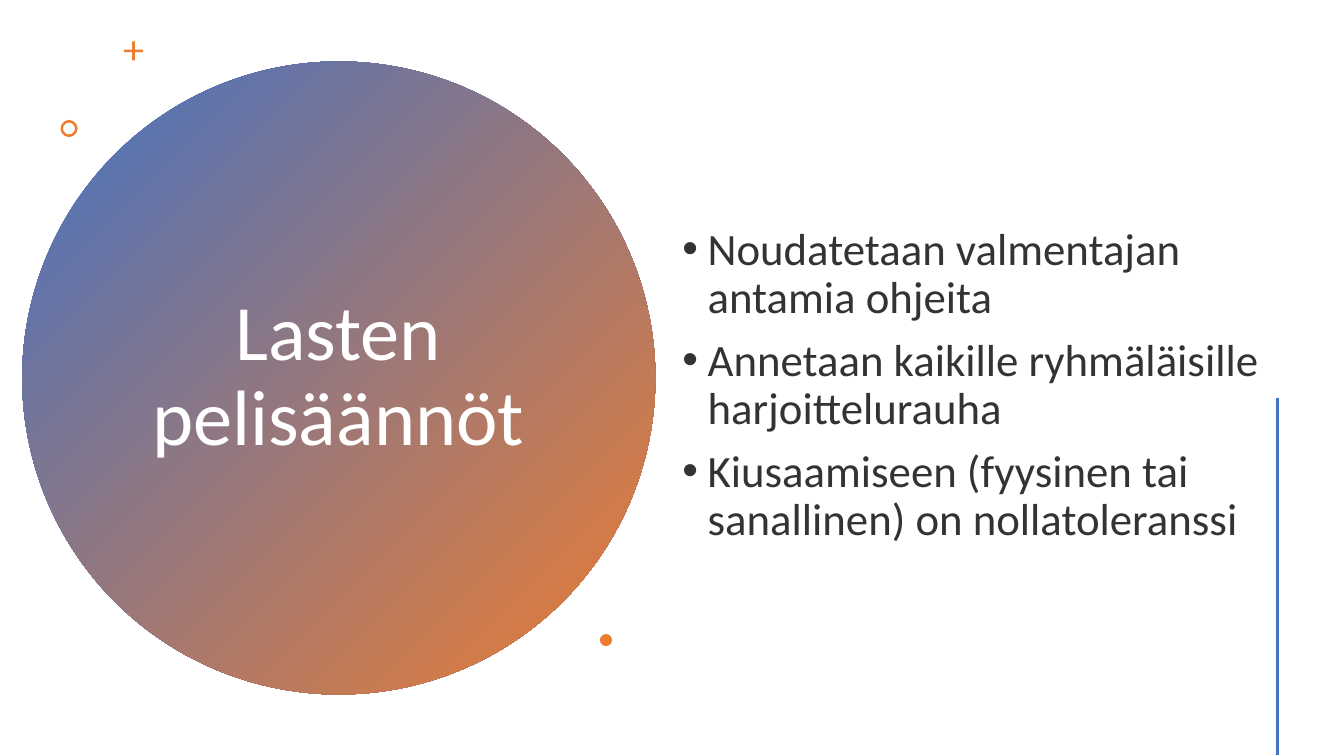
from lxml import etree
from pptx import Presentation
from pptx.dml.color import RGBColor
from pptx.enum.shapes import MSO_CONNECTOR, MSO_SHAPE
from pptx.enum.text import MSO_ANCHOR, PP_ALIGN
from pptx.oxml.ns import qn
from pptx.util import Inches, Pt

OVAL, CROSS, RING = MSO_SHAPE.OVAL, MSO_SHAPE.CROSS, MSO_SHAPE.DONUT
LINE = MSO_CONNECTOR.STRAIGHT
MIDDLE = MSO_ANCHOR.MIDDLE
LEFT, CENTER = PP_ALIGN.LEFT, PP_ALIGN.CENTER
BLUE, ORANGE, WHITE, DARK = "4472C4", "ED7D31", "FFFFFF", "333333"
RULES = [
    "Noudatetaan valmentajan antamia ohjeita",
    "Annetaan kaikille ryhmäläisille harjoittelurauha",
    "Kiusaamiseen (fyysinen tai sanallinen) on nollatoleranssi",
]


def color(code):
    """Turn a hex string into a colour."""
    return RGBColor.from_string(code)


def add_mark(slide, kind, x, y, size, adjust=None):
    """Add a plain orange shape in a square box."""
    mark = slide.shapes.add_shape(kind, *map(Inches, (x, y, size, size)))
    mark.shadow.inherit = False
    mark.line.fill.background()
    mark.fill.solid()
    mark.fill.fore_color.rgb = color(ORANGE)
    if adjust is not None:
        mark.adjustments[0] = adjust
    return mark


def add_text(slide, box, lines, size, code, align, bullet=False):
    """Add vertically centred paragraphs, bulleted if asked."""
    frame = slide.shapes.add_textbox(*map(Inches, box)).text_frame
    frame.word_wrap = True
    frame.vertical_anchor = MIDDLE
    for i, line in enumerate(lines):
        para = frame.add_paragraph() if i else frame.paragraphs[0]
        para.text = line
        para.alignment = align
        para.line_spacing = 0.9
        para.space_before = Pt(10 if i else 0)
        if bullet:
            props = para._p.get_or_add_pPr()
            props.set("marL", str(Inches(0.25)))
            props.set("indent", str(-Inches(0.25)))
            etree.SubElement(props, qn("a:buFont")).set("typeface", "Arial")
            etree.SubElement(props, qn("a:buChar")).set("char", "•")
        para.font.name = "Calibri"
        para.font.size = Pt(size)
        para.font.color.rgb = color(code)


def add_badge(slide, x, y, size):
    """Add the gradient disc with its title and small marks."""
    disc = add_mark(slide, OVAL, x, y, size)
    disc.fill.gradient()
    disc.fill.gradient_angle = 315
    for stop, code in zip(disc.fill.gradient_stops, (BLUE, ORANGE)):
        stop.color.rgb = color(code)
    add_text(slide, (x + 1.14, y + 0.8, 3.99, 4.67),
             ["Lasten pelisäännöt"], 56, WHITE, CENTER)
    add_mark(slide, CROSS, x + 1.01, y - 0.2, 0.19, 0.43)
    add_mark(slide, RING, x + 0.38, y + 0.58, 0.17, 0.15)
    add_mark(slide, OVAL, x + 5.73, y + 5.68, 0.12)


def add_rules(slide, x, y, width, height):
    """Add the list of rules and the upright line at its right."""
    add_text(slide, (x, y, width, height), RULES, 32, DARK, LEFT, True)
    edge = x + 6
    line = slide.shapes.add_connector(
        LINE, *map(Inches, (edge, 3.95, edge, 7.49)))
    line.line.color.rgb = color(BLUE)
    line.line.width = Pt(2)
    etree.SubElement(line._element.spPr, qn("a:effectLst"))


def main():
    """Build and save the slide."""
    deck = Presentation()
    deck.slide_width, deck.slide_height = Inches(13.33), Inches(7.5)
    slide = deck.slides.add_slide(deck.slide_layouts[6])
    add_badge(slide, 0.22, 0.61, 6.28)
    add_rules(slide, 6.67, 0.58, 6.28, 6.5)
    deck.save("out.pptx")


if __name__ == "__main__":
    main()
